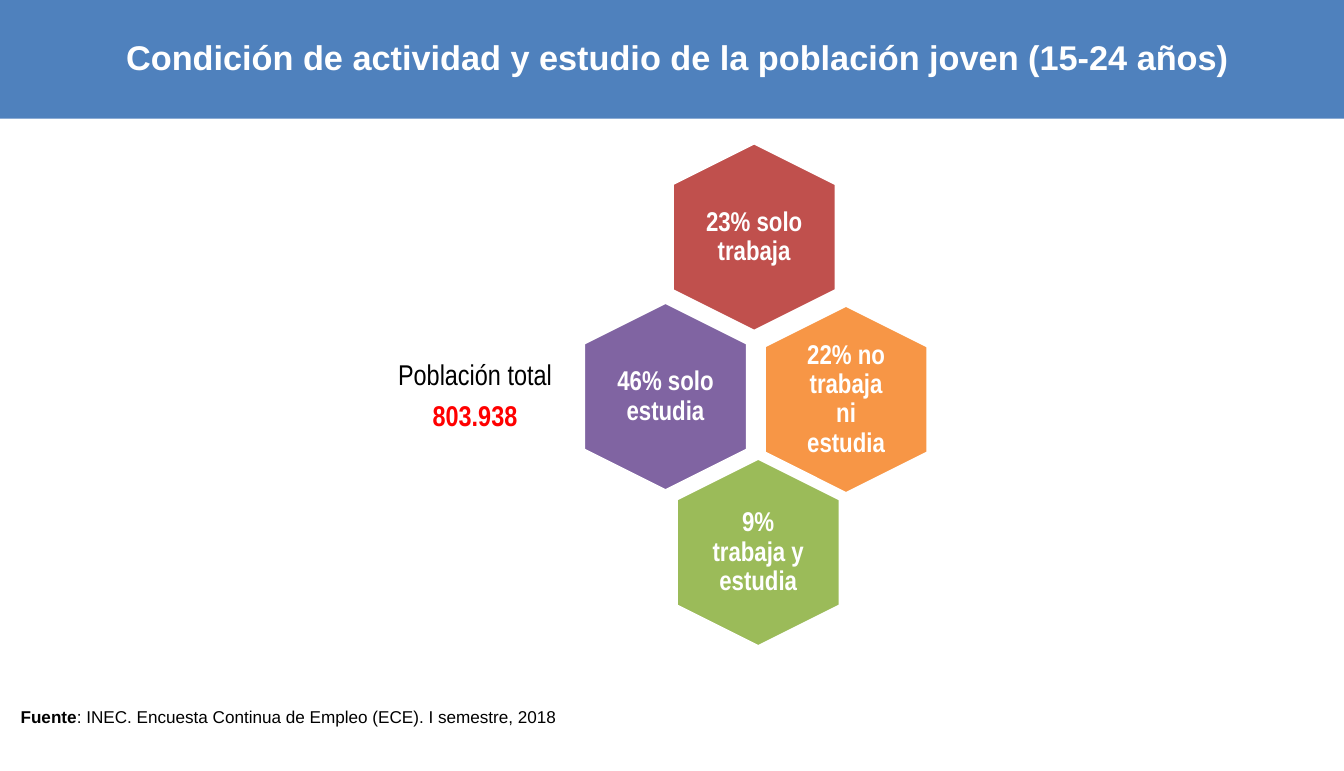
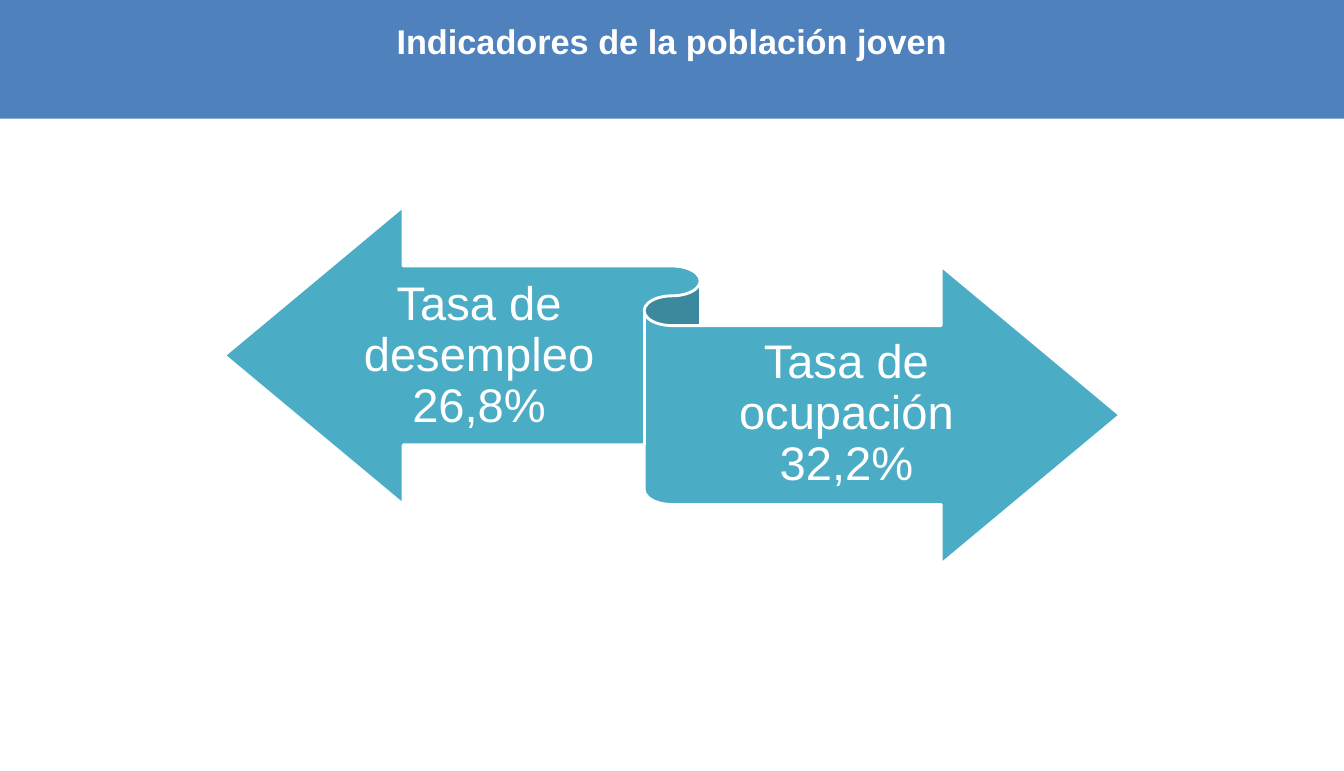
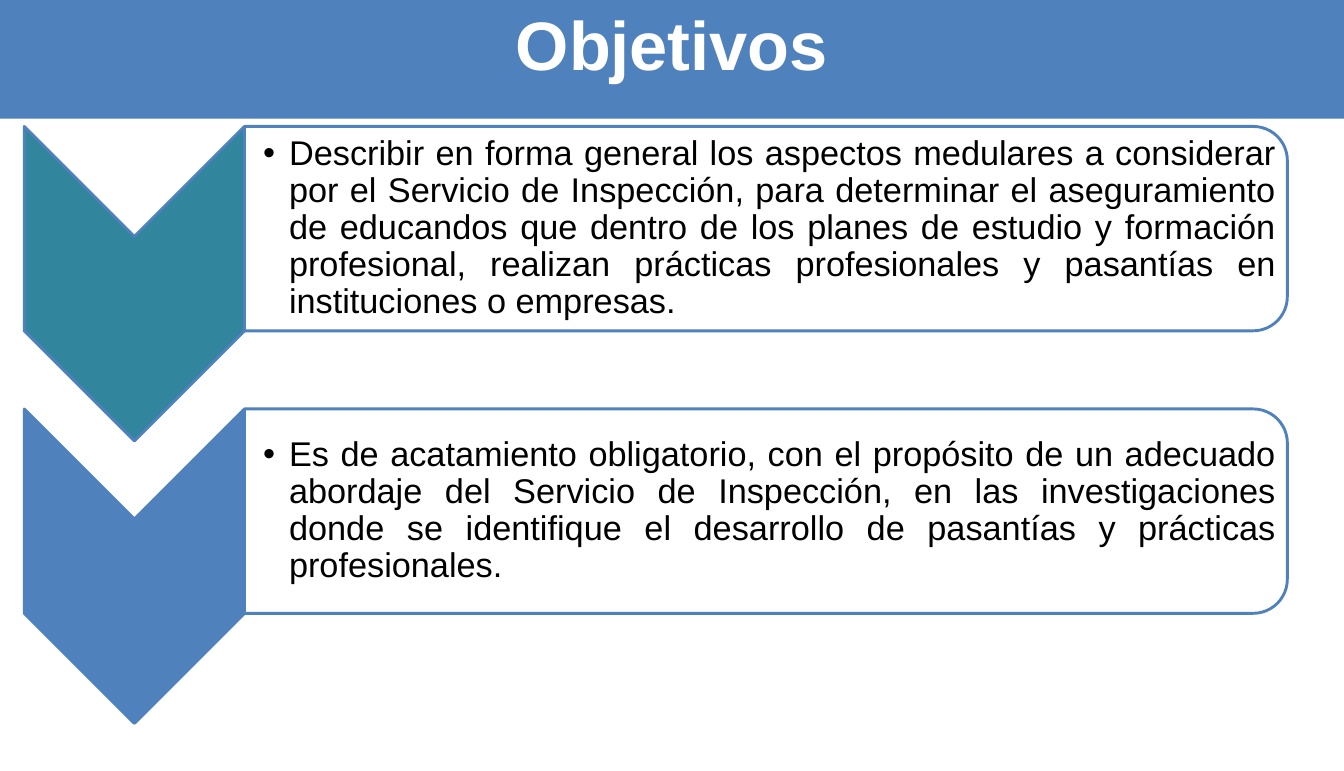
from dataclasses import dataclass, replace

from lxml import etree
from pptx import Presentation
from pptx import util as u
from pptx.dml.color import RGBColor
from pptx.enum import shapes, text
from pptx.oxml import ns


# Theme and element descriptions
@dataclass(frozen=True)
class Style:
    size: float
    colour: str
    bold: bool = False
    font: str = "Arial"


@dataclass(frozen=True)
class Theme:
    white: str = "FFFFFF"
    blue: str = "4F81BD"
    red: str = "C0504D"
    purple: str = "8064A2"
    orange: str = "F79646"
    green: str = "9BBB59"
    aqua: str = "4BACC6"
    teal: str = "31859C"
    outline: float = 2
    title: Style = Style(24, "FFFFFF", True)
    big_title: Style = Style(48, "FFFFFF", True)
    hexagon: Style = Style(19, "FFFFFF", True, "Arial Narrow")
    total: Style = Style(20, "000000", False, "Arial Narrow")
    figure: Style = Style(20, "FF0000", True, "Arial Narrow")
    rate: Style = Style(33, "FFFFFF")
    source: Style = Style(12, "000000")
    objective: Style = Style(24, "000000")


@dataclass(frozen=True)
class Box:
    """Position and size in centimetres."""
    left: float
    top: float
    width: float
    height: float

    @classmethod
    def centred(cls, x: float, y: float, width: float, height: float) -> "Box":
        return cls(x - width / 2, y - height / 2, width, height)

    def lengths(self) -> list:
        return [u.Cm(v) for v in (self.left, self.top, self.width, self.height)]


@dataclass(frozen=True)
class Group:
    """A share of the young population, shown as a hexagon."""
    label: str
    x: float
    y: float
    colour: str


@dataclass(frozen=True)
class Rate:
    label: str
    box: Box


@dataclass(frozen=True)
class Objective:
    wording: str
    colour: str


THEME = Theme()
WIDTH, HEIGHT, BAND_HEIGHT = 33.2, 19.05, 2.93
TITLE_WIDTH, TITLE_HEIGHT = 29.87, 0.97

GROUPS = [
    Group("23% solo trabaja", 18.63, 5.86, THEME.red),
    Group("46% solo estudia", 16.44, 9.8, THEME.purple),
    Group("22% no trabaja ni estudia", 20.9, 9.87, THEME.orange),
    Group("9% trabaja y estudia", 18.73, 13.65, THEME.green),
]
RATES = [
    Rate("Tasa de desempleo 26,8%", Box(8.19, 6.65, 7.29, 4.34)),
    Rate("Tasa de ocupación 32,2%", Box(16.59, 8.08, 8.64, 4.34)),
]
OBJECTIVES = [
    Objective("Describir en forma general los aspectos medulares a considerar por el "
              "Servicio de Inspección, para determinar el aseguramiento de educandos que "
              "dentro de los planes de estudio y formación profesional, realizan prácticas "
              "profesionales y pasantías en instituciones o empresas.", THEME.teal),
    Objective("Es de acatamiento obligatorio, con el propósito de un adecuado abordaje "
              "del Servicio de Inspección, en las investigaciones donde se identifique "
              "el desarrollo de pasantías y prácticas profesionales.", THEME.blue),
]


# Shared drawing functions
def place(shape, box: Box) -> None:
    shape.left, shape.top, shape.width, shape.height = box.lengths()


def format_span(span, style: Style) -> None:
    span.font.name = style.font
    span.font.size = u.Pt(style.size)
    span.font.bold = style.bold
    span.font.color.rgb = RGBColor.from_string(style.colour)


def format_para(para, style: Style, align, spacing: float = 1) -> None:
    para.alignment = align
    para.line_spacing = spacing
    for span in para.runs:
        format_span(span, style)


def set_frame(frame, insets: tuple, anchor=text.MSO_ANCHOR.MIDDLE) -> None:
    """Insets are left, top, right and bottom in centimetres."""
    frame.word_wrap = True
    frame.auto_size = text.MSO_AUTO_SIZE.NONE
    frame.vertical_anchor = anchor
    (frame.margin_left, frame.margin_top,
     frame.margin_right, frame.margin_bottom) = [u.Cm(v) for v in insets]


def add_figure(page, kind, box: Box, fill: str, line: str | None = None,
               rotation: float = 0, opacity: int = 100):
    figure = page.shapes.add_shape(kind, *box.lengths())
    figure.shadow.inherit = False
    figure.rotation = rotation
    figure.fill.solid()
    figure.fill.fore_color.rgb = RGBColor.from_string(fill)
    if opacity < 100:
        colour = next(figure.element.iter(ns.qn("a:srgbClr")))
        etree.SubElement(colour, ns.qn("a:alpha"), val=str(opacity * 1000))
    if line:
        figure.line.color.rgb = RGBColor.from_string(line)
        figure.line.width = u.Pt(THEME.outline)
    else:
        figure.line.fill.background()
    return figure


def add_label(page, box: Box, wording: str, styles: list[Style], insets: tuple):
    """Centred text with one style for each paragraph."""
    label = page.shapes.add_textbox(*box.lengths())
    set_frame(label.text_frame, insets)
    label.text_frame.text = wording
    for para, style in zip(label.text_frame.paragraphs, styles):
        format_para(para, style, text.PP_ALIGN.CENTER, 0.9)
    return label


def add_page(deck, layout: int, title: str, box: Box, style: Style = THEME.title,
             insets: tuple = (0.25, 0.13, 0.25, 0.13)):
    page = deck.slides.add_slide(deck.slide_layouts[layout])
    heading = page.shapes.title
    place(heading, box)
    set_frame(heading.text_frame, insets)
    heading.text_frame.text = title
    format_para(heading.text_frame.paragraphs[0], style, text.PP_ALIGN.CENTER)
    return page


def move_band_to_master(deck, page) -> None:
    band = add_figure(page, shapes.MSO_SHAPE.RECTANGLE,
                      Box(0, 0, WIDTH, BAND_HEIGHT), THEME.blue)
    band.element.nvSpPr.cNvPr.set("id", "20")
    deck.slide_master.shapes.element.insert(2, band.element)


# Slide 1: activity and study
def build_activity(deck):
    page = add_page(deck, 5,
                    "Condición de actividad y estudio de la población joven (15-24 años)",
                    Box(1.8, 0.91, TITLE_WIDTH, TITLE_HEIGHT))
    insets = (0.2,) * 4
    for group in GROUPS:
        hexagon = add_figure(page, shapes.MSO_SHAPE.HEXAGON,
                             Box.centred(group.x, group.y, 4.65, 4.04),
                             group.colour, THEME.white, rotation=90)
        hexagon.adjustments[0] = 0.25
        add_label(page, Box.centred(group.x, group.y, 2.79, 3.2),
                  group.label, [THEME.hexagon], insets)

    total = add_label(page, Box(9.22, 8.41, 5.03, 2.79), "Población total\n803.938",
                      [THEME.total, THEME.figure], insets)
    total.text_frame.paragraphs[0].space_after = u.Pt(7)

    source = page.shapes.add_textbox(*Box(0.26, 17.33, 19.08, 0.76).lengths())
    set_frame(source.text_frame, (0.25, 0.13, 0.25, 0.13), text.MSO_ANCHOR.TOP)
    para = source.text_frame.paragraphs[0]
    for wording, bold in (("Fuente", True),
                          (": INEC. Encuesta Continua de Empleo (ECE). I semestre, 2018", False)):
        span = para.add_run()
        span.text = wording
        format_span(span, replace(THEME.source, bold=bold))
    return page


# Slide 2: indicators
def build_indicators(deck) -> None:
    page = add_page(deck, 5, "Indicadores de la población joven",
                    Box(1.66, 0.53, TITLE_WIDTH, TITLE_HEIGHT))
    add_figure(page, shapes.MSO_SHAPE.LEFT_RIGHT_RIBBON,
               Box(5.54, 5.1, 22.13, 8.84), THEME.aqua, THEME.white)
    for rate in RATES:
        add_label(page, rate.box, rate.label, [THEME.rate], (0, 0.33, 0, 0.37))


# Slide 3: objectives
def build_objectives(deck) -> None:
    page = add_page(deck, 3, "Objetivos", Box(0, 0.97, WIDTH, TITLE_HEIGHT),
                    THEME.big_title, (0.25, 0, 0.25, 0.79))
    bodies = [holder for holder in page.placeholders
              if holder.placeholder_format.idx in (1, 2)]
    for row, (objective, body) in enumerate(zip(OBJECTIVES, bodies)):
        middle = 5.65 + row * 6.98
        add_figure(page, shapes.MSO_SHAPE.CHEVRON,
                   Box.centred(3.32, middle + 1.36, 7.77, 5.44),
                   objective.colour, THEME.blue, rotation=90)
        add_figure(page, shapes.MSO_SHAPE.ROUND_2_SAME_RECTANGLE,
                   Box.centred(18.92, middle, 5.05, 25.76),
                   THEME.white, THEME.blue, rotation=90, opacity=90)

        place(body, Box.centred(18.79, middle, 25.54, 4.55))
        set_frame(body.text_frame, (0.48, 0.05, 0.05, 0.05))
        body.text_frame.text = objective.wording
        para = body.text_frame.paragraphs[0]
        format_para(para, THEME.objective, text.PP_ALIGN.JUSTIFY, 0.9)
        para.space_before = u.Pt(0)
        # Hanging bullet, with the list in front of its panel
        properties = next(body.element.iter(ns.qn("a:pPr")))
        indent = u.Cm(0.64)
        properties.set("marL", str(indent))
        properties.set("indent", str(-indent))
        page.shapes.element.append(body.element)


def main() -> None:
    deck = Presentation()
    deck.slide_width, deck.slide_height = u.Cm(WIDTH), u.Cm(HEIGHT)
    first = build_activity(deck)
    move_band_to_master(deck, first)
    build_indicators(deck)
    build_objectives(deck)
    deck.save("out.pptx")


if __name__ == "__main__":
    main()
